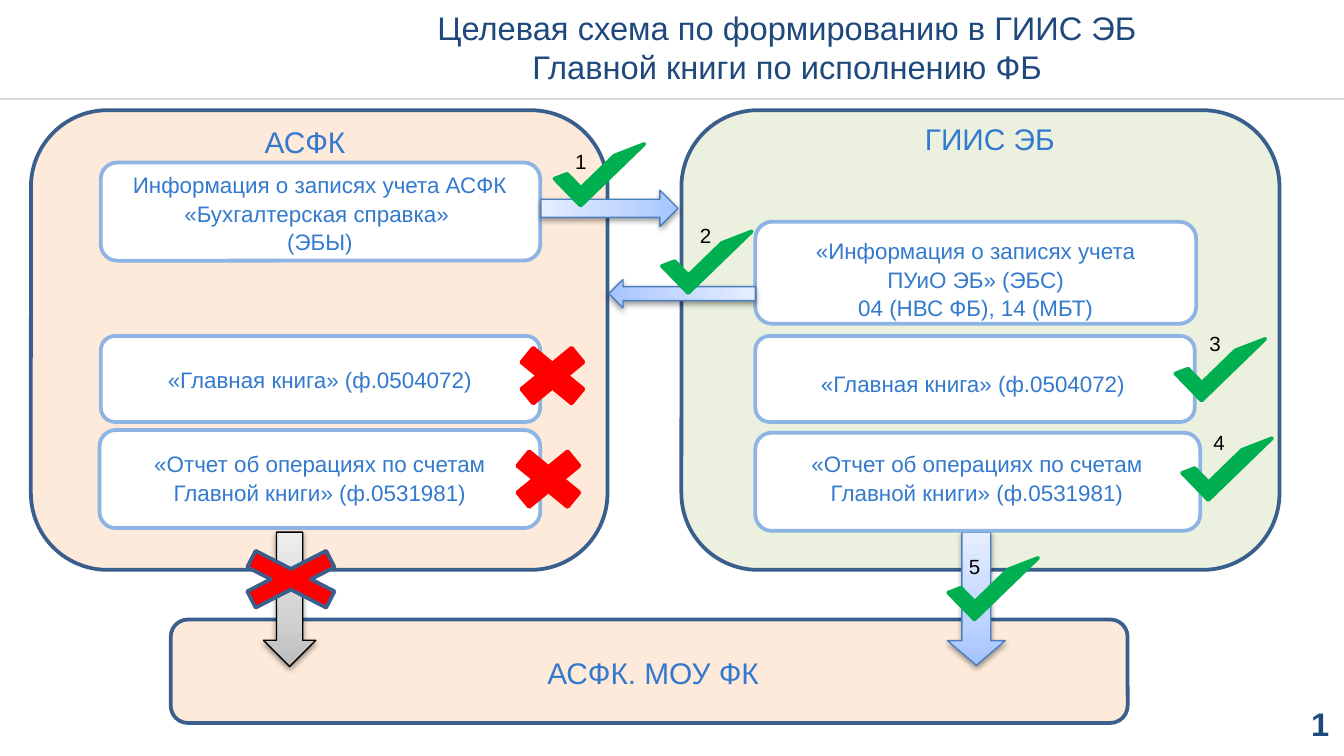
from lxml import etree
from pptx import Presentation
from pptx.dml.color import RGBColor
from pptx.enum.shapes import MSO_CONNECTOR, MSO_SHAPE
from pptx.enum.text import PP_ALIGN
from pptx.oxml import parse_xml
from pptx.oxml.ns import qn
from pptx.util import Inches, Pt

ROUNDED = MSO_SHAPE.ROUNDED_RECTANGLE
DOWN_ARROW = MSO_SHAPE.DOWN_ARROW
CROSS = MSO_SHAPE.MATH_MULTIPLY
HALF_FRAME = MSO_SHAPE.HALF_FRAME
STRAIGHT = MSO_CONNECTOR.STRAIGHT
LEFT, CENTER, RIGHT = PP_ALIGN.LEFT, PP_ALIGN.CENTER, PP_ALIGN.RIGHT

COLORS = {
    "navy": "1F497D", "text": "3379CD", "black": "000000", "white": "FFFFFF",
    "rule": "D9D9D9", "border": "3A5F8C", "box_border": "8EB4E3",
    "peach": "FDEADA", "green_bg": "EBF1DE",
    "yes": "00B050", "no": "FF0000", "arrow_border": "4B7EBC",
}
GRADIENTS = {
    "blue": ("A4C4FF", "BFD4FF", "E6EEFF"),
    "gray": ("BDBDBD", "D1D1D1", "EEEEEE"),
}
STOPS = (0, 35000, 100000)
DRAWING_NS = 'xmlns:a="http://schemas.openxmlformats.org/drawingml/2006/main"'

LEDGER = "«Главная книга» (ф.0504072)"
REPORT = "«Отчет об операциях по счетам Главной книги» (ф.0531981)"


def rgb(name):
    return RGBColor.from_string(COLORS[name])


def add_figure(slide, kind, at, fill, border, width=2, rotation=0):
    figure = slide.shapes.add_shape(kind, *map(Inches, at))
    figure.shadow.inherit = False
    figure.rotation = rotation
    if fill:
        figure.fill.solid()
        figure.fill.fore_color.rgb = rgb(fill)
    figure.line.color.rgb = rgb(border)
    figure.line.width = Pt(width)
    return figure


def add_text(slide, at, text, size, color="text", align=CENTER,
             spacing=1.07, bold=False, inset=True):
    """A newline starts a paragraph, a vertical tab is a soft line break."""
    frame = slide.shapes.add_textbox(*map(Inches, at)).text_frame
    frame.word_wrap = True
    if not inset:
        frame.margin_left = frame.margin_right = 0
        frame.margin_top = frame.margin_bottom = 0
    frame.text = text
    for paragraph in frame.paragraphs:
        paragraph.alignment = align
        paragraph.line_spacing = spacing
        for run in paragraph.runs:
            run.font.name = "Arial"
            run.font.size = Pt(size)
            run.font.bold = bold
            run.font.color.rgb = rgb(color)


def add_arrow(slide, at, gradient, border, rotation=0, head=None):
    """Block arrow with a three-stop gradient and a soft shadow below."""
    arrow = add_figure(slide, DOWN_ARROW, at, None, border, 0.75, rotation)
    if head:
        arrow.adjustments[1] = head
    arrow.fill.gradient()
    stops = "".join(
        f'<a:gs pos="{pos}"><a:srgbClr val="{color}"/></a:gs>'
        for pos, color in zip(STOPS, GRADIENTS[gradient]))
    properties = arrow._element.spPr
    properties.replace(properties.find(qn("a:gradFill")), parse_xml(
        f'<a:gradFill {DRAWING_NS} rotWithShape="1"><a:gsLst>{stops}</a:gsLst>'
        '<a:lin ang="16200000" scaled="0"/></a:gradFill>'))
    properties.replace(properties.find(qn("a:effectLst")), parse_xml(
        f'<a:effectLst {DRAWING_NS}><a:outerShdw blurRad="{Pt(3.1)}" '
        f'dist="{Pt(1.6)}" dir="5400000" rotWithShape="0">'
        '<a:srgbClr val="000000"><a:alpha val="38000"/></a:srgbClr>'
        '</a:outerShdw></a:effectLst>'))


def add_box(slide, at, text_at, text):
    add_figure(slide, ROUNDED, at, "white", "box_border")
    add_text(slide, text_at, text, 12)


def add_check(slide, left, top):
    add_figure(slide, HALF_FRAME, (left, top, 0.28, 0.66), "yes", "yes",
               rotation=225.9)


def add_header(slide):
    rule = slide.shapes.add_connector(
        STRAIGHT, Inches(0), Inches(0.74), Inches(10), Inches(0.74))
    rule.line.color.rgb = rgb("rule")
    rule.line.width = Pt(1)
    etree.SubElement(rule._element.spPr, qn("a:effectLst"))
    add_text(slide, (7.59, 5.24, 2.3, 0.29), "1", 17.5, "navy", RIGHT, 1,
             bold=True, inset=False)
    add_text(slide, (1.96, 0.06, 7.8, 0.59),
             "Целевая схема по формированию в ГИИС ЭБ\v"
             "Главной книги по исполнению ФБ",
             17.5, "navy", spacing=1, inset=False)


def main():
    prs = Presentation()
    # Widescreen 16:9
    prs.slide_width = Inches(10)
    prs.slide_height = Inches(10 * 9 / 16)
    slide = prs.slides.add_slide(prs.slide_layouts[6])
    add_header(slide)

    # Systems
    for at, fill, title_at, title in (
        ((0.23, 0.82, 4.29, 3.42), "peach", (1.6, 0.85, 1.34, 0.37), "АСФК"),
        ((5.07, 0.82, 4.45, 3.42), "green_bg", (6.51, 0.83, 1.71, 0.39),
         "ГИИС ЭБ"),
        ((1.27, 4.61, 7.12, 0.77), "peach", (3.85, 4.8, 2.02, 0.39),
         "АСФК. МОУ ФК"),
    ):
        add_figure(slide, ROUNDED, at, fill, "border")
        add_text(slide, title_at, title, 16)

    # Flows down to the lower system
    add_arrow(slide, (7.05, 3.96, 0.43, 0.99), "blue", "arrow_border",
              head=0.425)
    add_arrow(slide, (1.96, 3.96, 0.39, 1), "gray", "black")

    # Documents
    for at, text_at, text in (
        ((5.62, 3.22, 3.31, 0.73), (5.72, 3.29, 3.1, 0.53), REPORT),
        ((0.74, 3.2, 3.28, 0.73), (0.84, 3.29, 3.08, 0.53), REPORT),
        ((0.75, 1.21, 3.27, 0.73), (0.84, 1.21, 3.08, 0.75),
         "Информация о записях учета АСФК «Бухгалтерская справка» \v(ЭБЫ)"),
        ((5.62, 2.5, 3.27, 0.64), (5.72, 2.69, 3.04, 0.32), LEDGER),
        ((0.75, 2.5, 3.27, 0.64), (0.92, 2.66, 2.92, 0.32), LEDGER),
        ((5.62, 1.65, 3.28, 0.76), (5.74, 1.7, 3.04, 0.75),
         "«Информация о записях учета\v ПУиО ЭБ» (ЭБС) \n"
         "04 (НВС ФБ), 14 (МБТ)"),
    ):
        add_box(slide, at, text_at, text)

    # Exchange between the systems
    add_arrow(slide, (4.97, 1.64, 0.21, 1.09), "blue", "arrow_border", 90)
    add_arrow(slide, (4.4, 1.04, 0.27, 1.02), "blue", "arrow_border", 270)

    # Discontinued items
    add_figure(slide, CROSS, (1.6, 4.02, 1.13, 0.58), "no", "border")
    for left, top in ((3.72, 3.27), (3.75, 2.5)):
        add_figure(slide, CROSS, (left, top, 0.72, 0.59), "no", "no")

    # Numbered steps: check mark, then its number
    steps = (
        ((4.32, 0.87), (4.18, 1.06)),
        ((5.12, 1.52), (5.11, 1.61)),
        ((8.94, 2.32), (8.9, 2.41)),
        ((8.99, 3.06), (8.93, 3.15)),
        ((7.25, 3.95), (7.11, 4.07)),
    )
    for number, (check, label) in enumerate(steps, 1):
        add_check(slide, *check)
        add_text(slide, (*label, 0.38, 0.29), str(number), 11, "black", LEFT, 1)

    prs.save("out.pptx")


if __name__ == "__main__":
    main()
